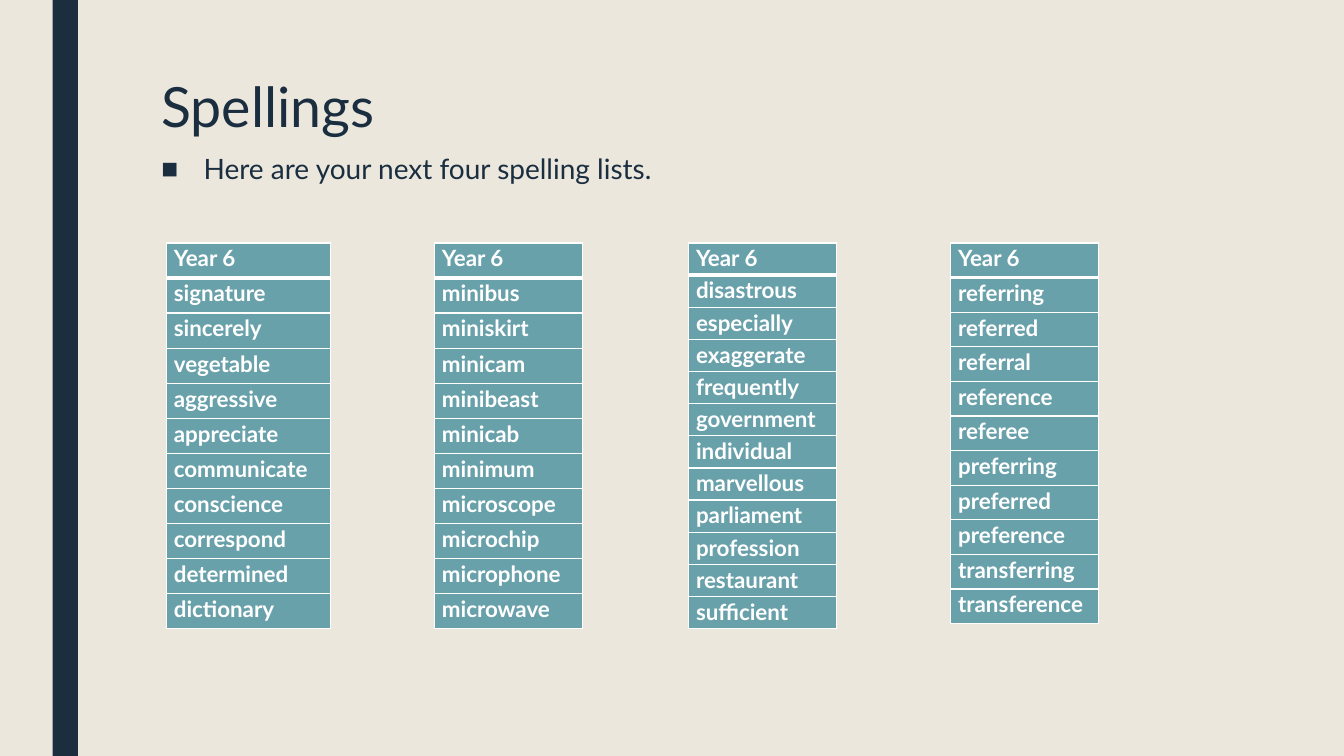
from lxml import etree
from pptx import Presentation
from pptx.dml.color import RGBColor
from pptx.enum import shapes, text
from pptx.oxml import ns
from pptx.util import Pt

CREAM = RGBColor(0xEB, 0xE7, 0xDD)
NAVY = RGBColor(0x1A, 0x2E, 0x40)
TEAL = RGBColor(0x69, 0xA1, 0xAB)
WHITE = RGBColor(0xFF, 0xFF, 0xFF)
FONT = "Lato"
LISTS_TOP = 173.5

# Each list: left, width, height, words
SPELLING_LISTS = [
    (118.8, 117.4, 275.8,
     "signature sincerely vegetable aggressive appreciate communicate "
     "conscience correspond determined dictionary"),
    (310.3, 105.8, 275.8,
     "minibus miniskirt minicam minibeast minicab minimum "
     "microscope microchip microphone microwave"),
    (491.8, 105.8, 275.8,
     "disastrous especially exaggerate frequently government individual "
     "marvellous parliament profession restaurant sufficient"),
    (679, 105.8, 272.2,
     "referring referred referral reference referee preferring "
     "preferred preference transferring transference"),
]


def style_para(para, size, color, spacing, bold=False):
    para.alignment = text.PP_ALIGN.LEFT
    para.line_spacing = spacing
    for span in para.runs:
        span.font.name = FONT
        span.font.size = Pt(size)
        span.font.bold = bold
        span.font.color.rgb = color


def fill_placeholder(box, left, top, width, height, words):
    box.left, box.top, box.width, box.height = map(Pt, (left, top, width, height))
    frame = box.text_frame
    frame.text = words
    frame.word_wrap = True
    frame.auto_size = text.MSO_AUTO_SIZE.NONE
    frame.vertical_anchor = text.MSO_ANCHOR.TOP
    return frame.paragraphs[0]


def add_side_bar(page, left, top, width, height):
    bar = page.shapes.add_shape(shapes.MSO_SHAPE.RECTANGLE,
                                Pt(left), Pt(top), Pt(width), Pt(height))
    bar.shadow.inherit = False
    bar.fill.solid()
    bar.fill.fore_color.rgb = NAVY
    bar.line.fill.background()


def add_heading(page, left, top, width):
    # Title
    title_height = 52.6
    para = fill_placeholder(page.shapes.title, left, top, width, title_height,
                            "Spellings")
    style_para(para, 39.6, NAVY, 0.89)

    # Bulleted introduction
    para = fill_placeholder(page.placeholders[1], left, top + title_height,
                            width, 282.2, "Here are your next four spelling lists.")
    style_para(para, 20, NAVY, 0.94)
    para.space_before, para.space_after = Pt(10), Pt(2)
    props = para._p.get_or_add_pPr()
    props.set("marL", str(Pt(30.2)))
    props.set("indent", str(-Pt(30.2)))
    etree.SubElement(props, ns.qn("a:buFont")).set("typeface", "Arial")
    etree.SubElement(props, ns.qn("a:buChar")).set("char", "■")


def add_borders(cell, widths):
    """Draw white borders; widths maps a side (L, R, T, B) to points."""
    props = cell._tc.get_or_add_tcPr()
    for index, side in enumerate("LRTB"):
        line = etree.Element(ns.qn(f"a:ln{side}"), w=str(Pt(widths[side])))
        fill = etree.SubElement(line, ns.qn("a:solidFill"))
        etree.SubElement(fill, ns.qn("a:srgbClr")).set("val", str(WHITE))
        props.insert(index, line)


def add_spelling_list(page, left, top, width, height, words):
    entries = ["Year 6"] + words.split()
    table = page.shapes.add_table(len(entries), 1, Pt(left), Pt(top),
                                  Pt(width), Pt(height)).table
    for index, entry in enumerate(entries):
        table.rows[index].height = Pt(height / len(entries))
        cell = table.cell(index, 0)
        cell.text = entry
        cell.margin_left = cell.margin_right = Pt(5.4)
        cell.margin_top = cell.margin_bottom = 0
        cell.vertical_anchor = text.MSO_ANCHOR.TOP
        cell.fill.solid()
        cell.fill.fore_color.rgb = TEAL
        style_para(cell.text_frame.paragraphs[0], 16, WHITE, 1.07, bold=True)
        # A thick rule parts the header from the words
        add_borders(cell, {"L": 1, "R": 1, "T": 3 if index == 1 else 1,
                           "B": 3 if index == 0 else 1})


def build_spellings_slide(deck):
    page = deck.slides.add_slide(deck.slide_layouts[1])
    page.background.fill.solid()
    page.background.fill.fore_color.rgb = CREAM
    add_side_bar(page, 37.6, 0, 18, 540)
    add_heading(page, 108, 54, 756)
    for left, width, height, words in SPELLING_LISTS:
        add_spelling_list(page, left, LISTS_TOP, width, height, words)


def main():
    deck = Presentation()
    deck.slide_width, deck.slide_height = Pt(960), Pt(540)
    build_spellings_slide(deck)
    deck.save("out.pptx")


if __name__ == "__main__":
    main()
